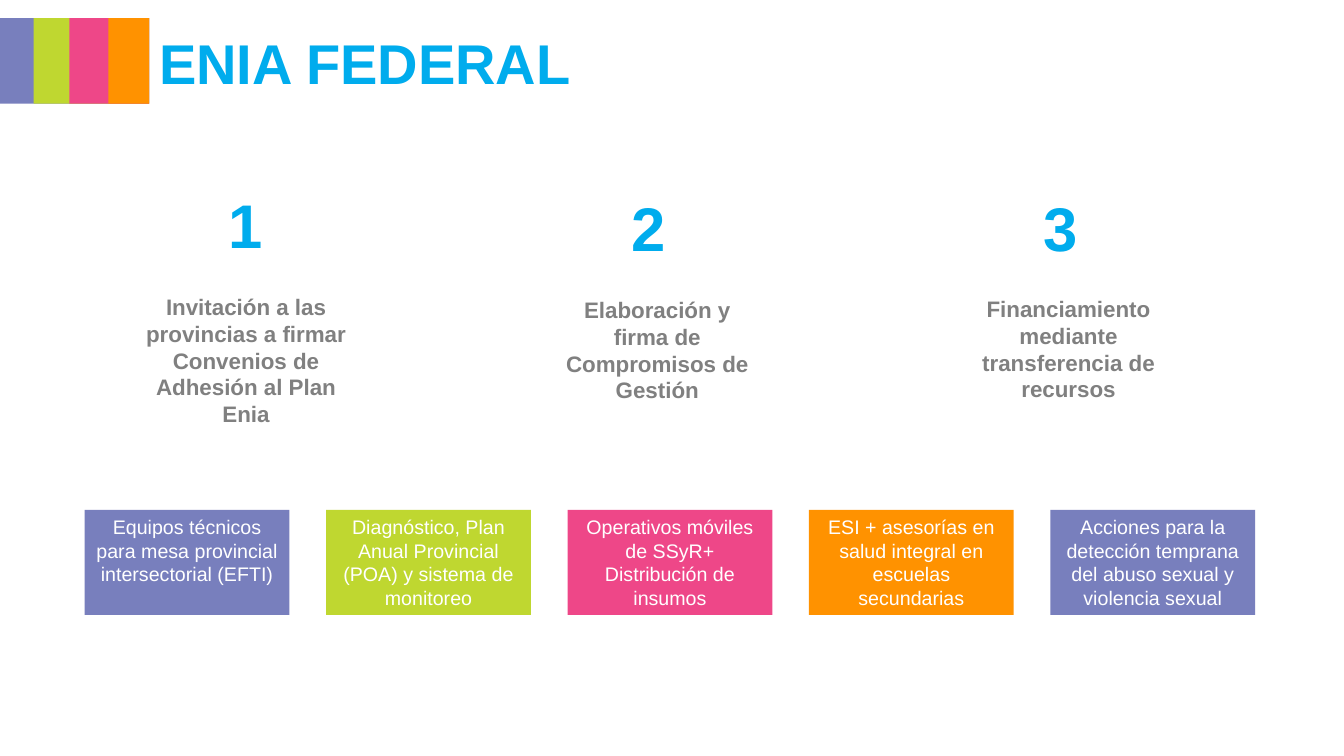
from dataclasses import dataclass

import pptx
import pptx.dml.color
import pptx.enum.shapes
import pptx.enum.text
import pptx.util

Pt = pptx.util.Pt
ALIGN = pptx.enum.text.PP_ALIGN
ANCHOR = pptx.enum.text.MSO_ANCHOR
RECTANGLE = pptx.enum.shapes.MSO_SHAPE.RECTANGLE

COLOURS = {
    "violet": "787FBD",
    "lime": "BFD730",
    "pink": "EE4788",
    "orange": "FF9200",
    "blue": "00ACED",
    "grey": "808080",
    "white": "FFFFFF",
}


@dataclass(frozen=True)
class Area:
    left: float
    top: float
    width: float
    height: float

    def lengths(self) -> tuple:
        return Pt(self.left), Pt(self.top), Pt(self.width), Pt(self.height)


@dataclass(frozen=True)
class Style:
    size: float
    colour: str
    bold: bool = False
    align: ALIGN = ALIGN.CENTER
    anchor: ANCHOR = ANCHOR.MIDDLE


@dataclass(frozen=True)
class Step:
    number: str
    number_area: Area
    text: str
    text_area: Area


@dataclass(frozen=True)
class Card:
    text: str
    colour: str


TITLE_STYLE = Style(40, "blue", bold=True, align=ALIGN.LEFT)
NUMBER_STYLE = Style(44, "blue", bold=True)
STEP_STYLE = Style(16, "grey", bold=True)
CARD_STYLE = Style(14, "white", anchor=ANCHOR.TOP)

STRIPE_LEFTS = {"violet": 0, "lime": 24, "pink": 49.5, "orange": 77.5}
STRIPES_RIGHT = 106.5

STEPS = [
    Step("1", Area(145.5, 134, 60.5, 52.5),
         "Invitación a las provincias a firmar\nConvenios de Adhesión al Plan Enia",
         Area(86.5, 206.5, 178.5, 101.5)),
    Step("2", Area(433, 136, 60.5, 52.5),
         "Elaboración y firma de\nCompromisos de Gestión",
         Area(391.5, 199, 156, 101.5)),
    Step("3", Area(727.5, 136, 60.5, 52.5),
         "Financiamiento mediante\ntransferencia de recursos",
         Area(691, 198.5, 144.5, 101)),
]

CARDS = [
    Card("Equipos técnicos\npara mesa provincial intersectorial (EFTI)", "violet"),
    Card("Diagnóstico, Plan Anual Provincial\n(POA) y sistema de monitoreo", "lime"),
    Card("Operativos móviles\nde SSyR+ Distribución de insumos", "pink"),
    Card("ESI + asesorías en salud integral en escuelas secundarias", "orange"),
    Card("Acciones para la detección temprana del abuso sexual y violencia sexual",
         "violet"),
]
FIRST_CARD = Area(60.5, 364.3, 146.3, 75)
CARD_PITCH = 172.45


def rgb(colour: str) -> pptx.dml.color.RGBColor:
    return pptx.dml.color.RGBColor.from_string(COLOURS[colour])


def write(box, text: str, style: Style) -> None:
    frame = box.text_frame
    frame.text = text
    frame.word_wrap = True
    frame.auto_size = pptx.enum.text.MSO_AUTO_SIZE.NONE
    frame.vertical_anchor = style.anchor
    for para in frame.paragraphs:
        para.alignment = style.align
        for span in para.runs:
            span.font.name = "Arial"
            span.font.size = Pt(style.size)
            span.font.bold = style.bold
            span.font.color.rgb = rgb(style.colour)


def add_rectangle(shapes, area: Area, colour: str):
    box = shapes.add_shape(RECTANGLE, *area.lengths())
    box.shadow.inherit = False
    box.fill.solid()
    box.fill.fore_color.rgb = rgb(colour)
    box.line.fill.background()
    return box


def add_title(page) -> None:
    title = page.shapes.title
    title.left, title.top, title.width, title.height = Area(106.5, 13, 758, 62).lengths()
    write(title, "ENIA FEDERAL", TITLE_STYLE)


def add_stripes(page) -> None:
    group = page.shapes.add_group_shape()
    for colour, left in STRIPE_LEFTS.items():
        add_rectangle(group.shapes, Area(left, 13, STRIPES_RIGHT - left, 61), colour)


def add_step(page, step: Step) -> None:
    write(page.shapes.add_textbox(*step.number_area.lengths()), step.number, NUMBER_STYLE)
    write(page.shapes.add_textbox(*step.text_area.lengths()), step.text, STEP_STYLE)


def add_card(page, card: Card, column: int) -> None:
    area = Area(FIRST_CARD.left + column * CARD_PITCH, FIRST_CARD.top,
                FIRST_CARD.width, FIRST_CARD.height)
    write(add_rectangle(page.shapes, area, card.colour), card.text, CARD_STYLE)


def main() -> None:
    deck = pptx.Presentation()
    deck.slide_width, deck.slide_height = Pt(960), Pt(540)
    page = deck.slides.add_slide(deck.slide_layouts.get_by_name("Title Only"))
    add_title(page)
    add_stripes(page)
    for step in STEPS:
        add_step(page, step)
    for column, card in enumerate(CARDS):
        add_card(page, card, column)
    deck.save("out.pptx")


if __name__ == "__main__":
    main()
